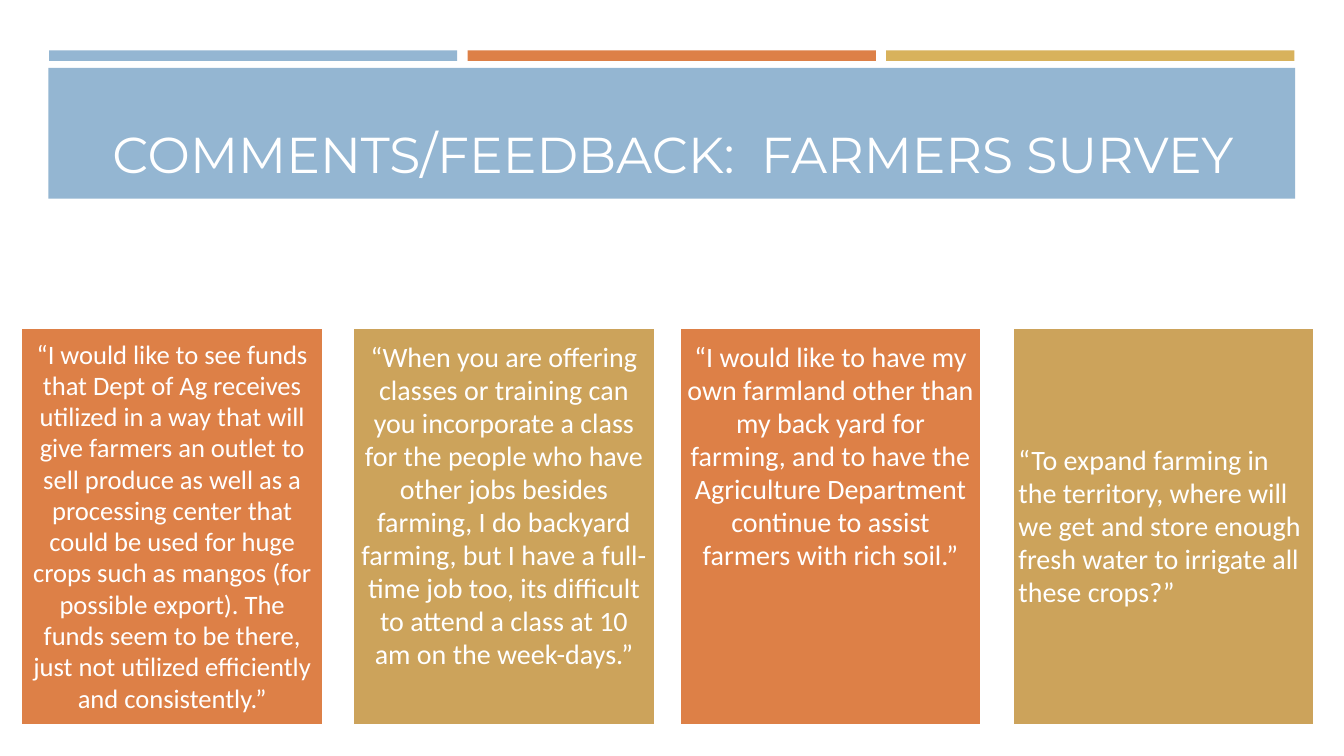
from pptx import Presentation
from pptx.dml.color import RGBColor
from pptx.enum.shapes import MSO_SHAPE
from pptx.enum.text import MSO_ANCHOR, PP_ALIGN
from pptx.util import Pt

COLORS = {
    "blue": "94B6D2",
    "orange": "DD8047",
    "gold": "D8B25C",
    "ochre": "CCA35B",
    "white": "FFFFFF",
}

presentation = Presentation()
presentation.slide_width = Pt(960)
presentation.slide_height = Pt(540)
slide = presentation.slides.add_slide(presentation.slide_layouts[6])


def add_block(left, top, width, height, color, outline=None):
    shape = slide.shapes.add_shape(
        MSO_SHAPE.RECTANGLE, Pt(left), Pt(top), Pt(width), Pt(height))
    shape.shadow.inherit = False
    shape.fill.solid()
    shape.fill.fore_color.rgb = RGBColor.from_string(COLORS[color])
    if outline:
        shape.line.color.rgb = RGBColor.from_string(COLORS[outline])
        shape.line.width = Pt(2)
    else:
        shape.line.fill.background()


def add_text(text, left, top, width, height, size=20, font="Calibri",
             align=PP_ALIGN.CENTER, anchor=MSO_ANCHOR.MIDDLE,
             inset=4.5, bottom_inset=4.5, line_spacing=0.98):
    box = slide.shapes.add_textbox(Pt(left), Pt(top), Pt(width), Pt(height))
    frame = box.text_frame
    frame.word_wrap = True
    frame.vertical_anchor = anchor
    frame.margin_left = frame.margin_right = frame.margin_top = Pt(inset)
    frame.margin_bottom = Pt(bottom_inset)
    paragraph = frame.paragraphs[0]
    paragraph.text = text
    paragraph.alignment = align
    paragraph.line_spacing = line_spacing
    paragraph.font.size = Pt(size)
    paragraph.font.name = font
    paragraph.font.color.rgb = RGBColor.from_string(COLORS["white"])


# Header: three accent bars above the title band
for index, color in enumerate(["blue", "orange", "gold"]):
    add_block(35 + index * 299, 36, 291.6, 7.5, color)
add_block(34.6, 48.5, 890.6, 93.5, "blue")
add_text("COMMENTS/FEEDBACK:  FARMERS SURVEY", 34.6, 55.4, 892, 80,
         size=36, font="Montserrat", anchor=MSO_ANCHOR.BOTTOM, line_spacing=1.0)

# Quote cards
CARD_TOP, CARD_WIDTH, CARD_HEIGHT = 234, 216, 284.4
cards = [
    (15, "orange",
     "“I would like to see funds that Dept of Ag receives utilized in a way "
     "that will give farmers an outlet to sell produce as well as a processing "
     "center that could be used for huge crops such as mangos (for possible "
     "export). The funds seem to be there, just not utilized efficiently and "
     "consistently.”",
     {"size": 19}),
    (252, "ochre",
     "“When you are offering classes or training can you incorporate a class "
     "for the people who have other jobs besides farming, I do backyard "
     "farming, but I have a full-time job too, its difficult to attend a class "
     "at 10 am on the week-days.”",
     {"bottom_inset": 34}),
    (485.3, "orange",
     "“I would like to have my own farmland other than my back yard for "
     "farming, and to have the Agriculture Department continue to assist "
     "farmers with rich soil.”",
     {"top": 252.7, "height": 147}),
    (723, "ochre",
     "“To expand farming in the territory, where will we get and store enough "
     "fresh water to irrigate all these crops?”",
     {"align": PP_ALIGN.LEFT}),
]
for left, color, quote, text_format in cards:
    add_block(left, CARD_TOP, CARD_WIDTH, CARD_HEIGHT, color, outline="white")
    placement = {"top": CARD_TOP, "height": CARD_HEIGHT, **text_format}
    add_text(quote, left, width=CARD_WIDTH, **placement)

presentation.save("out.pptx")
